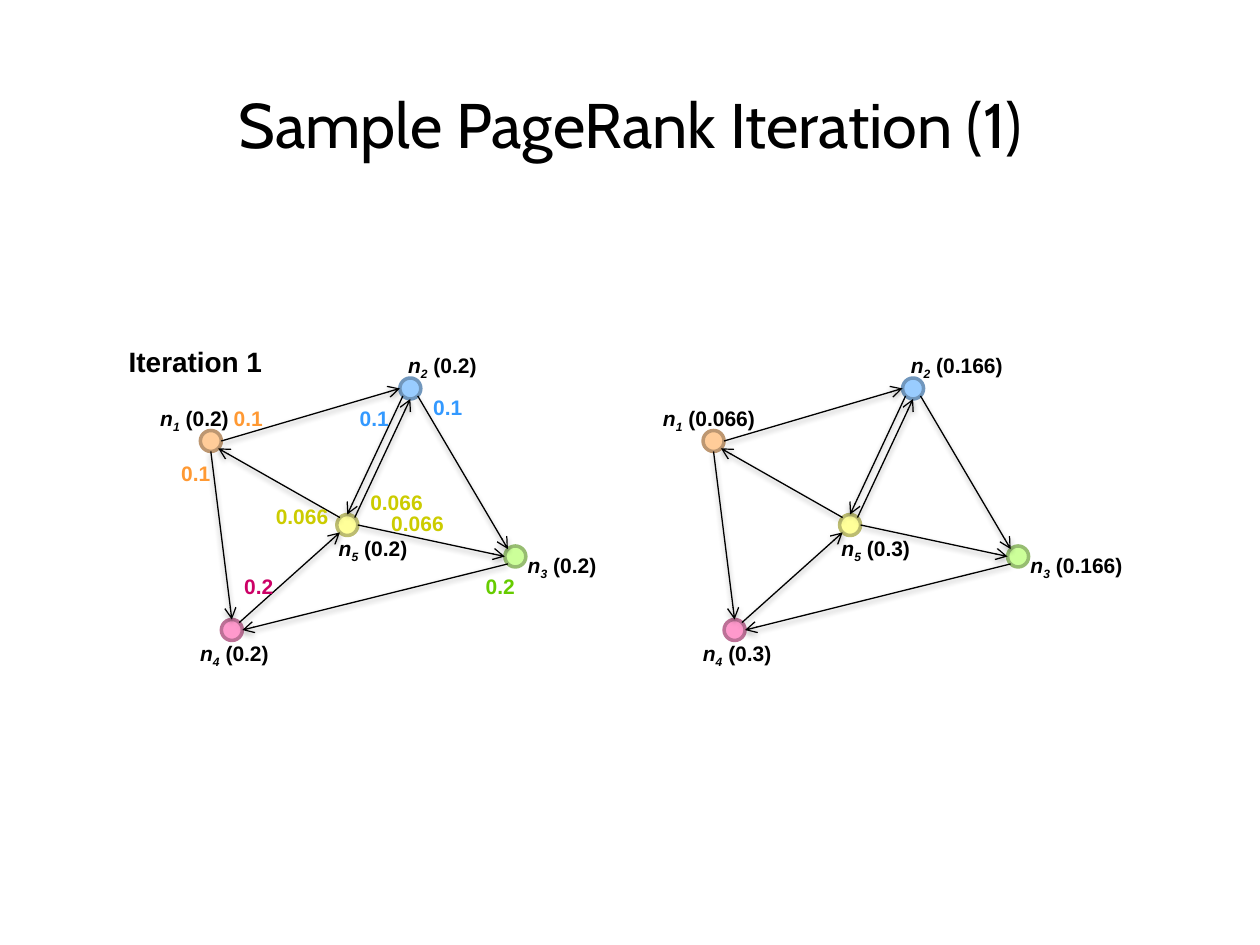
from math import cos, sin, radians
from lxml.etree import SubElement
from pptx import Presentation
from pptx.dml.color import RGBColor
from pptx.enum.shapes import MSO_CONNECTOR, MSO_SHAPE
from pptx.enum.text import MSO_ANCHOR, MSO_AUTO_SIZE, PP_ALIGN
from pptx.oxml.ns import qn
from pptx.util import Inches, Pt

UNIT = Inches(1 / 12)
HUES = {
    "ink": "000000", "orange": "FF9933", "blue": "3399FF",
    "pink": "CC0066", "green": "66CC00", "yellow": "CCCC00",
}
NODES = {
    1: (1, 6, "FFCC99", "BD9771"),
    2: (20, 1, "99CCFF", "7197BD"),
    3: (30, 17, "CCFF99", "97BD71"),
    4: (3, 24, "FF99CC", "BD7197"),
    5: (14, 14, "FFFF99", "BDBD71"),
}
ANGLES = {"E": 0, "SE": 45, "S": 90, "SW": 135, "W": 180, "NW": 225, "N": 270, "NE": 315}
EDGES = [
    (1, "E", 2, "W"), (5, "NW", 1, "SE"), (1, "S", 4, "N"),
    (4, "NE", 5, "SW"), (5, "NE", 2, "S"), (2, "SE", 3, "NW"),
    (5, "E", 3, "W"), (3, "SW", 4, "E"), (2, "SW", 5, "N"),
]
SPOTS = {1: (-5, 2), 2: (18.6, -3), 3: (30, 16), 4: (-1.2, 24.4), 5: (12, 14.4)}
FLOWS = [
    ("0.1", 2, 2, "orange"), ("0.1", -3, 7.3, "orange"),
    ("0.2", 3, 18, "pink"), ("0.2", 26, 18, "green"),
    ("0.1", 14, 2, "blue"), ("0.1", 21, 1, "blue"),
    ("0.066", 6, 11.4, "yellow"), ("0.066", 17, 12, "yellow"),
    ("0.066", 15, 10, "yellow"),
]
BOLD = {"name": "Arial", "size": Pt(12), "bold": True}


def style(item, vals):
    for key, val in vals.items():
        setattr(item, key, val)


def paint(part, code):
    part.solid()
    part.fore_color.rgb = RGBColor.from_string(code)


def write(shapes, box, runs, hue="ink", **more):
    frame = shapes.add_textbox(*map(int, box)).text_frame
    style(frame, {"word_wrap": False, "auto_size": MSO_AUTO_SIZE.SHAPE_TO_FIT_TEXT})
    for text, slant, base in runs:
        run = frame.paragraphs[0].add_run()
        run.text = text
        style(run.font, {**BOLD, "italic": slant, **more})
        paint(run.font.fill, HUES[hue])
        if base:
            run.font._element.set("baseline", str(base))


def rim(node, side):
    x, y = NODES[node][:2]
    turn = radians(ANGLES[side])
    return x + cos(turn), y + sin(turn)


def finish(line):
    props = line._element.spPr
    SubElement(line.line._get_or_add_ln(), qn("a:tailEnd"), type="arrow")
    glow = SubElement(SubElement(props, qn("a:effectLst")), qn("a:outerShdw"),
                      blurRad=str(Pt(3.1)), dist=str(Pt(1.6)), dir="5400000", rotWithShape="0")
    tint = SubElement(glow, qn("a:srgbClr"), val=HUES["ink"])
    SubElement(tint, qn("a:alpha"), val="38000")


def graph(slide, left, top, ranks):
    def place(x, y):
        return int(left + x * UNIT), int(top + y * UNIT)

    parts = slide.shapes.add_group_shape().shapes
    for x, y, fill, edge in NODES.values():
        dot = parts.add_shape(MSO_SHAPE.OVAL, *place(x - 1, y - 1), 2 * UNIT, 2 * UNIT)
        dot.shadow.inherit = False
        paint(dot.fill, fill)
        paint(dot.line.fill, edge)
        dot.line.width = Pt(2)
    for start, out, end, into in EDGES:
        line = parts.add_connector(MSO_CONNECTOR.STRAIGHT,
                                   *place(*rim(start, out)), *place(*rim(end, into)))
        paint(line.line.fill, HUES["ink"])
        line.line.width = Pt(0.75)
        finish(line)
    for node, rank in ranks.items():
        wide = Inches(0.76 if len(rank) == 3 else 0.95)
        write(slide.shapes, (*place(*SPOTS[node]), wide, Inches(0.3)),
              [("n", True, 0), (str(node), True, -25000), (f" ({rank})", False, 0)])


def flows(slide, left, top):
    for text, x, y, hue in FLOWS:
        wide = Inches(0.44 if len(text) == 3 else 0.62)
        write(slide.shapes, (left + x * UNIT, top + y * UNIT, wide, Inches(0.3)),
              [(text, False, 0)], hue)


def header(slide, box):
    title = slide.shapes.title
    style(title, dict(zip(("left", "top", "width", "height"), box)))
    frame = title.text_frame
    frame.text = "Sample PageRank Iteration (1)"
    style(frame, {"word_wrap": True, "auto_size": MSO_AUTO_SIZE.NONE,
                  "vertical_anchor": MSO_ANCHOR.MIDDLE})
    para = frame.paragraphs[0]
    para.alignment = PP_ALIGN.CENTER
    font = para.runs[0].font
    style(font, {"name": "Cabin", "size": Pt(36), "bold": False})
    paint(font.fill, HUES["ink"])


def main():
    deck = Presentation()
    style(deck, {"slide_width": Inches(10), "slide_height": Inches(7.5)})
    slide = deck.slides.add_slide(deck.slide_layouts[5])
    wide, high = deck.slide_width, deck.slide_height
    header(slide, (0, int(high * 0.08), wide, int(high * 0.1)))
    top = Inches(3)
    left = Inches(1.59)
    graph(slide, left, top, dict.fromkeys(NODES, "0.2"))
    flows(slide, left, top)
    graph(slide, Inches(5.58), top,
          {1: "0.066", 2: "0.166", 3: "0.166", 4: "0.3", 5: "0.3"})
    write(slide.shapes, (left - 8 * UNIT, top - 3.8 * UNIT, Inches(1.28), Inches(0.37)),
          [("Iteration 1", False, 0)], size=Pt(16))
    deck.save("out.pptx")


if __name__ == "__main__":
    main()
